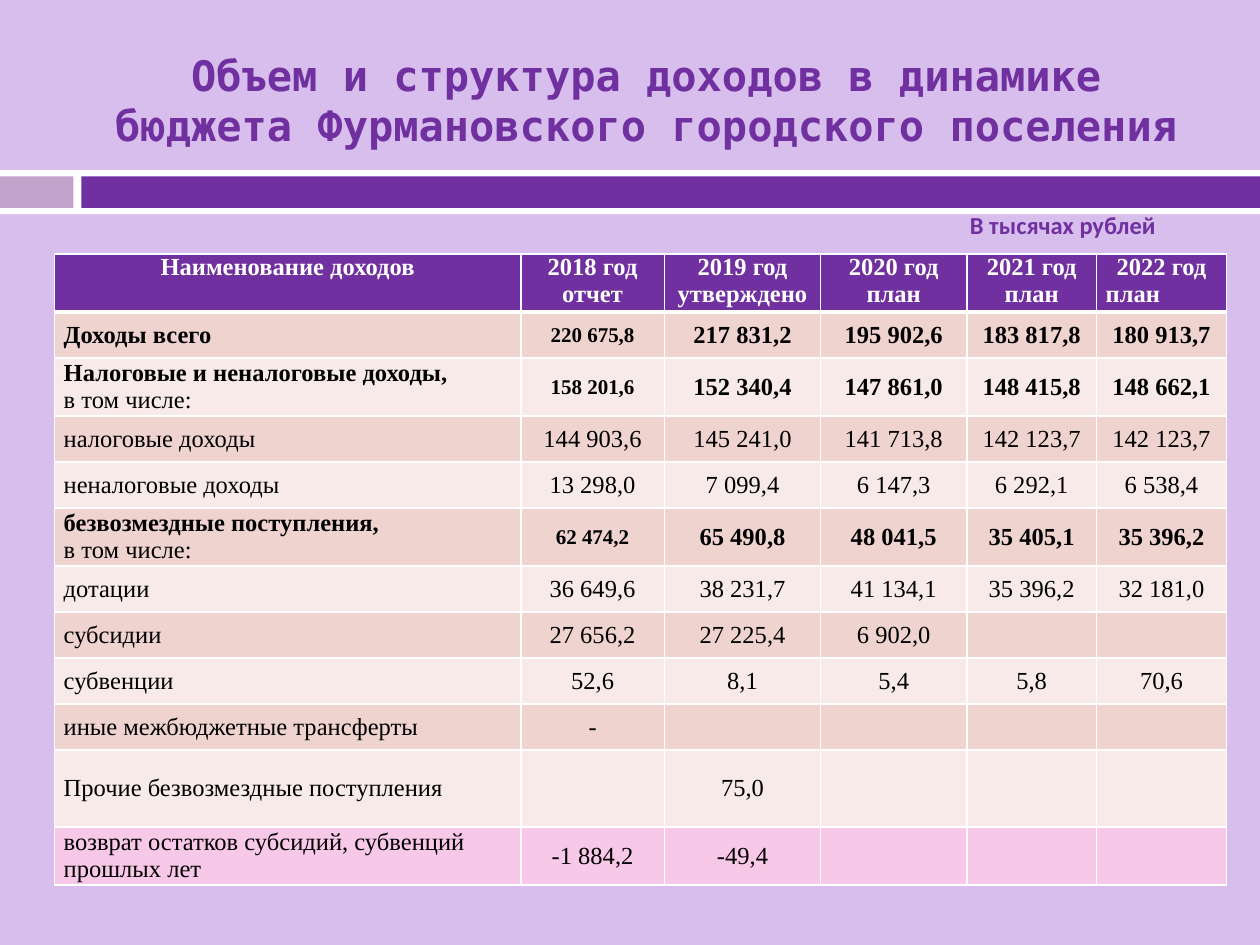
from pptx import Presentation
from pptx.dml.color import RGBColor
from pptx.enum.shapes import MSO_SHAPE as Shape
from pptx.enum.text import MSO_ANCHOR as Anchor, PP_ALIGN as Align
from pptx.oxml import parse_xml
from pptx.oxml.ns import nsdecls
from pptx.util import Pt

WHITE = RGBColor(0xFF, 0xFF, 0xFF)
BLACK = RGBColor(0, 0, 0)
LILAC = RGBColor(0xD8, 0xBE, 0xEC)
MAUVE = RGBColor(0xC0, 0xA2, 0xCA)
PURPLE = RGBColor(0x70, 0x30, 0xA0)
ROSE = RGBColor(0xEE, 0xD3, 0xCF)
PALE = RGBColor(0xF7, 0xEA, 0xE9)
PINK = RGBColor(0xF8, 0xC8, 0xE8)

HEAD = ["Наименование доходов", "2018 год\nотчет", "2019 год\nутверждено",
        "2020 год\nплан", "2021 год\nплан", "2022 год\nплан"]
ROWS = [
    ["Доходы всего", "220 675,8", "217 831,2", "195 902,6", "183 817,8", "180 913,7"],
    ["Налоговые и неналоговые доходы,\nв том числе:",
     "158 201,6", "152 340,4", "147 861,0", "148 415,8", "148 662,1"],
    ["налоговые доходы", "144 903,6", "145 241,0", "141 713,8", "142 123,7", "142 123,7"],
    ["неналоговые доходы", "13 298,0", "7 099,4", "6 147,3", "6 292,1", "6 538,4"],
    ["безвозмездные поступления,\nв том числе:",
     "62 474,2", "65 490,8", "48 041,5", "35 405,1", "35 396,2"],
    ["дотации", "36 649,6", "38 231,7", "41 134,1", "35 396,2", "32 181,0"],
    ["субсидии", "27 656,2", "27 225,4", "6 902,0", "", ""],
    ["субвенции", "52,6", "8,1", "5,4", "5,8", "70,6"],
    ["иные межбюджетные трансферты", "-", "", "", "", ""],
    ["Прочие безвозмездные поступления", "", "75,0", "", "", ""],
    ["возврат остатков субсидий, субвенций прошлых лет", "-1 884,2", "-49,4", "", "", ""],
]
TOTALS = {1, 2, 5}
WIDTHS = [266.4, 82.1, 89.3, 83.5, 74.2, 74.2]
LOW, MID, TALL = 26.3, 33.2, 44
HEIGHTS = [MID, LOW, MID, LOW, LOW, MID, LOW, LOW, LOW, LOW, TALL, MID]


class Page:
    fonts = {
        "title": {"name": "DejaVu Sans Mono", "size": Pt(24), "bold": True},
        "note": {"name": "Calibri", "size": Pt(14), "bold": True},
        "cell": {"name": "Times New Roman", "size": Pt(14), "bold": False},
    }
    insets = {"margin_left": Pt(5.2), "margin_right": Pt(5.2),
              "margin_top": 0, "margin_bottom": 0}

    def __init__(self, deck):
        self.slide = deck.slides.add_slide(deck.slide_layouts[5])
        fill = self.slide.background.fill
        fill.solid()
        fill.fore_color.rgb = LILAC

    def apply(self, item, form):
        for key, value in form.items():
            setattr(item, key, value)

    def text(self, para, words, kind, color, align, **extra):
        para.alignment = align
        run = para.add_run()
        run.text = words
        self.apply(run.font, {**self.fonts[kind], **extra})
        run.font.color.rgb = color

    def band(self, left, top, width, height, color):
        box = self.slide.shapes.add_shape(
            Shape.RECTANGLE, Pt(left), Pt(top), Pt(width), Pt(height))
        box.shadow.inherit = False
        box.fill.solid()
        box.fill.fore_color.rgb = color
        box.line.fill.background()

    def title(self, words, left, top, width, height):
        box = self.slide.shapes.title
        self.apply(box, {"left": Pt(left), "top": Pt(top),
                         "width": Pt(width), "height": Pt(height)})
        frame = box.text_frame
        self.apply(frame, {"word_wrap": True, "vertical_anchor": Anchor.MIDDLE})
        self.text(frame.paragraphs[0], words, "title", PURPLE, Align.CENTER)

    def note(self, words, left, top, width, height):
        box = self.slide.shapes.add_textbox(Pt(left), Pt(top), Pt(width), Pt(height))
        box.text_frame.word_wrap = True
        self.text(box.text_frame.paragraphs[0], words, "note", PURPLE, Align.LEFT)

    def edge(self, cell, row):
        thick = {"T": 3 if row == 1 else 1, "B": 3 if row == 0 else 1}
        props = cell._tc.get_or_add_tcPr()
        for side in "LRTB":
            props.append(parse_xml(
                f'<a:ln{side} {nsdecls("a")} w="{Pt(thick.get(side, 1))}">'
                f'<a:solidFill><a:srgbClr val="{WHITE}"/></a:solidFill></a:ln{side}>'))

    def cell(self, cell, words, row, col, color):
        self.edge(cell, row)
        cell.fill.solid()
        cell.fill.fore_color.rgb = color
        self.apply(cell, self.insets)
        cell.vertical_anchor = Anchor.MIDDLE if row else Anchor.TOP
        if not words:
            return
        frame = cell.text_frame
        for i, line in enumerate(words.split("\n")):
            para = frame.add_paragraph() if i else frame.paragraphs[0]
            align = Align.LEFT if row and col == 0 else Align.CENTER
            if row == 0 and col == 5 and i:
                align = Align.LEFT
            bold = row == 0 or (row in TOTALS and i == 0)
            size = Pt(12 if row in TOTALS and col == 1 else 14)
            self.text(para, line, "cell", BLACK if row else WHITE,
                      align, bold=bold, size=size)

    def table(self, left, top, rows):
        frame = self.slide.shapes.add_table(
            len(rows), len(WIDTHS), Pt(left), Pt(top), Pt(sum(WIDTHS)), Pt(sum(HEIGHTS)))
        grid = frame.table
        grid.horz_banding = False
        for col, width in zip(grid.columns, WIDTHS):
            col.width = Pt(width)
        for r, line in enumerate(rows):
            grid.rows[r].height = Pt(HEIGHTS[r])
            color = ROSE if r % 2 else PALE
            if r == 0:
                color = PURPLE
            elif r == len(rows) - 1:
                color = PINK
            for c, words in enumerate(line):
                self.cell(grid.cell(r, c), words, r, c, color)


def main():
    deck = Presentation()
    deck.slide_width, deck.slide_height = Pt(720), Pt(540)
    page = Page(deck)
    page.band(0, 97.2, 720, 25.2, WHITE)
    page.band(0, 100.8, 42, 18, MAUVE)
    page.band(46.5, 100.8, 673.5, 18, PURPLE)
    page.table(31.2, 145.1, [HEAD] + ROWS)
    page.title("Объем и структура доходов в динамике бюджета "
               "Фурмановского городского поселения", 48.2, 18, 642.2, 77.8)
    page.note("В тысячах рублей", 547.2, 116.6, 163.4, 33.8)
    deck.save("out.pptx")


if __name__ == "__main__":
    main()
